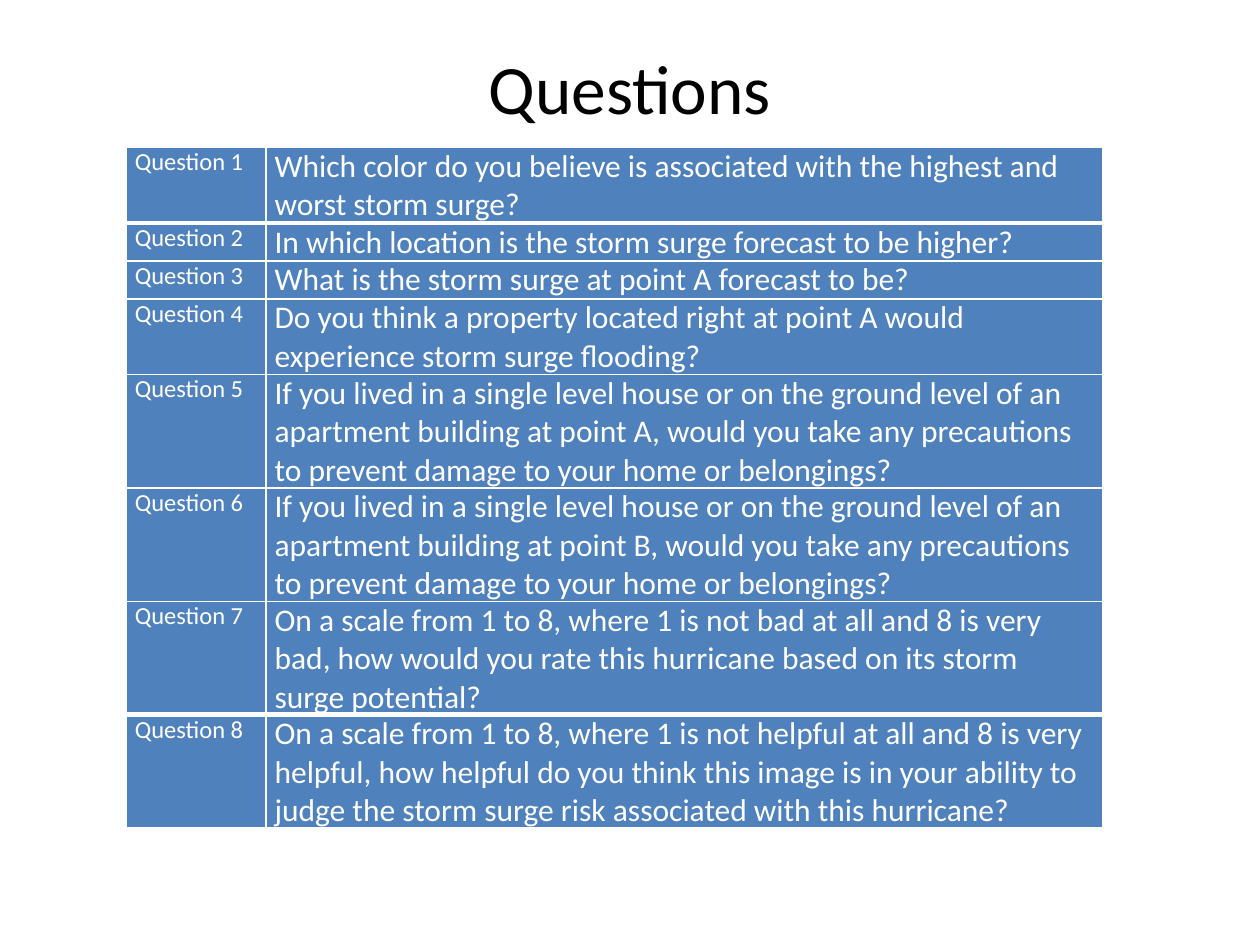
from lxml.etree import SubElement
from pptx import Presentation
from pptx.dml.color import RGBColor
from pptx.enum.text import MSO_ANCHOR, PP_ALIGN
from pptx.oxml.ns import qn
from pptx.util import Inches, Pt

BLUE = RGBColor(0x4F, 0x81, 0xBD)
WHITE = RGBColor(0xFF, 0xFF, 0xFF)
BLACK = RGBColor(0, 0, 0)
FONT = "Calibri"

TITLE = "Questions"
HOME = ("If you lived in a single level house or on the ground level of an "
        "apartment building at point {}, would you take any precautions to "
        "prevent damage to your home or belongings?")
# Question and its row height
ROWS = [
    ("Which color do you believe is associated with the highest and worst "
     "storm surge?", 0.57),
    ("In which location is the storm surge forecast to be higher?", 0.28),
    ("What is the storm surge at point A forecast to be?", 0.28),
    ("Do you think a property located right at point A would experience "
     "storm surge flooding?", 0.57),
    (HOME.format("A"), 0.85),
    (HOME.format("B"), 0.85),
    ("On a scale from 1 to 8, where 1 is not bad at all and 8 is very bad, "
     "how would you rate this hurricane based on its storm surge "
     "potential?", 0.57),
    ("On a scale from 1 to 8, where 1 is not helpful at all and 8 is very "
     "helpful, how helpful do you think this image is in your ability to "
     "judge the storm surge risk associated with this hurricane?", 0.85),
]
COLS = [(1.11, 14), (6.64, 18)]  # width, text size
LEFT, TOP, TALL = 1, 1.17, 5.4
THIN, THICK = 1, 3


def style(para, size, color):
    font = para.runs[0].font
    font.name, font.size, font.color.rgb = FONT, Pt(size), color


def border(cell, top, bottom):
    props = cell._tc.get_or_add_tcPr()
    sides = [("L", THIN), ("R", THIN), ("T", top), ("B", bottom)]
    for spot, (side, width) in enumerate(sides):
        line = props.makeelement(qn(f"a:ln{side}"), {"w": str(Pt(width))})
        fill = SubElement(line, qn("a:solidFill"))
        SubElement(fill, qn("a:srgbClr"), val=str(WHITE))
        props.insert(spot, line)  # borders come before the fill


def add_title(slide):
    box = slide.shapes.add_textbox(Inches(0.5), Inches(0.3), Inches(9), Inches(0.78))
    frame = box.text_frame
    frame.word_wrap = True
    frame.vertical_anchor = MSO_ANCHOR.MIDDLE
    frame.text = TITLE
    para = frame.paragraphs[0]
    para.alignment = PP_ALIGN.CENTER
    style(para, 39.6, BLACK)


def add_list(slide):
    wide = sum(width for width, _ in COLS)
    frame = slide.shapes.add_table(len(ROWS), len(COLS), Inches(LEFT),
                                   Inches(TOP), Inches(wide), Inches(TALL))
    table = frame.table
    for col, (width, _) in zip(table.columns, COLS):
        col.width = Inches(width)
    last = len(ROWS) - 1
    for row, (text, height) in enumerate(ROWS):
        table.rows[row].height = Inches(height)
        top = THICK if row in (1, last) else THIN
        bottom = THICK if row in (0, last - 1) else THIN
        for col, words in enumerate((f"Question {row + 1}", text)):
            cell = table.cell(row, col)
            cell.text = words
            cell.margin_left = cell.margin_right = Inches(0.07)
            cell.margin_top = cell.margin_bottom = 0
            cell.fill.solid()
            cell.fill.fore_color.rgb = BLUE
            border(cell, top, bottom)
            style(cell.text_frame.paragraphs[0], COLS[col][1], WHITE)
    frame.height = Inches(TALL)


def main():
    deck = Presentation()
    deck.slide_width, deck.slide_height = Inches(10), Inches(7.5)
    slide = deck.slides.add_slide(deck.slide_layouts[6])
    add_title(slide)
    add_list(slide)
    deck.save("out.pptx")


if __name__ == "__main__":
    main()
